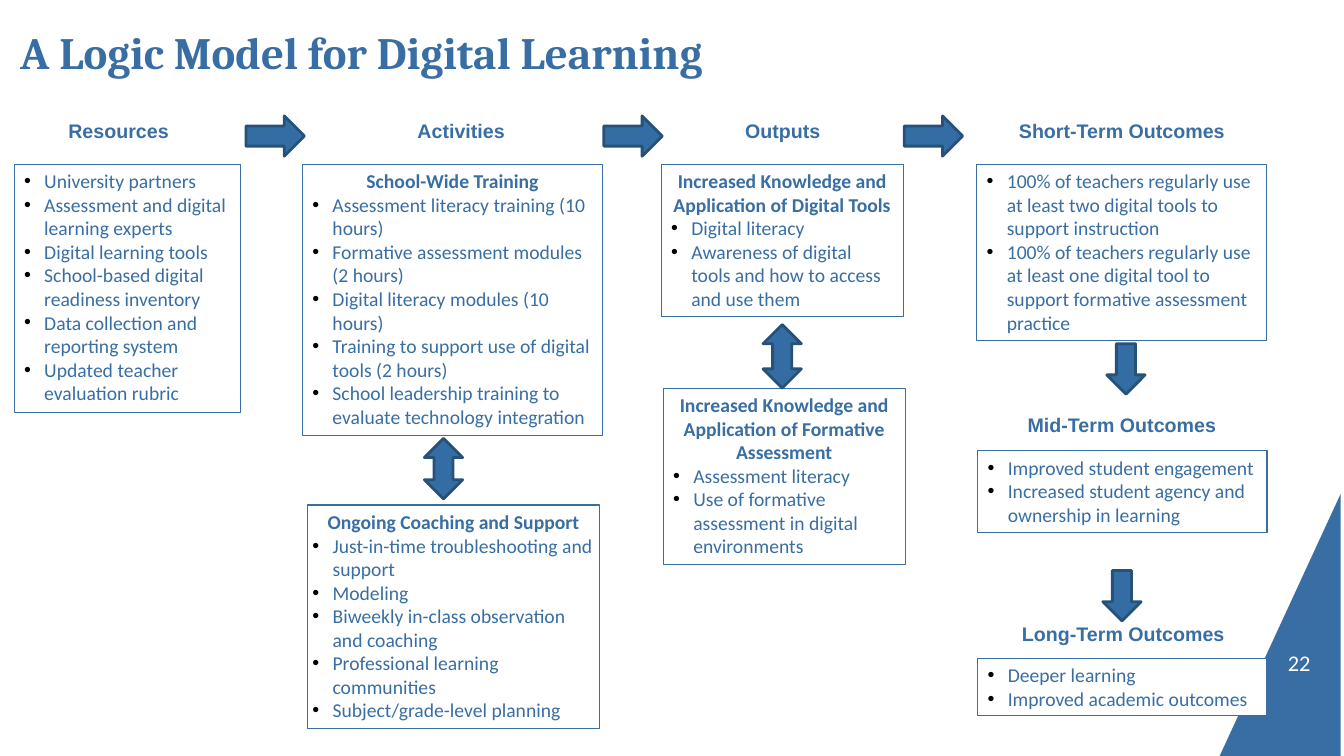
from dataclasses import dataclass

from lxml import etree
from pptx import Presentation
from pptx import util as u
from pptx.dml.color import RGBColor
from pptx.enum import shapes, text
from pptx.oxml.ns import qn

CELL = u.Inches(0.1)
COLS, ROWS = 133.33, 75
TOP, HEAD = 16.3, 11.3
KIND = shapes.MSO_SHAPE
LEFT, MID, RIGHT = text.PP_ALIGN.LEFT, text.PP_ALIGN.CENTER, text.PP_ALIGN.RIGHT


@dataclass(frozen=True)
class Theme:
    """Colours, fonts and type sizes of the slide."""
    ink: str = "386EA3"
    arrow: str = "346DA3"
    edge: str = "265179"
    white: str = "FFFFFF"
    dot: str = "000000"
    serif: str = "Cambria"
    sans: str = "Arial"
    body: str = "Calibri"
    large: int = 32
    page: int = 16
    small: int = 14


THEME = Theme()


def grid(*cells):
    """Turn grid cells into slide lengths."""
    return [int(n * CELL) for n in cells]


def paint(shape, fill=None, line=None, width=0.75):
    """Set fill and line of a shape and drop its shadow."""
    shape.shadow.inherit = False
    if fill:
        shape.fill.solid()
        shape.fill.fore_color.rgb = RGBColor.from_string(fill)
    else:
        shape.fill.background()
    if line:
        shape.line.color.rgb = RGBColor.from_string(line)
        shape.line.width = u.Pt(width)
    else:
        shape.line.fill.background()


def setup(shape, pad=None, anchor=text.MSO_ANCHOR.TOP, size=text.MSO_AUTO_SIZE.NONE):
    """Prepare a text frame with wrapping, anchor and margins."""
    frame = shape.text_frame
    frame.word_wrap = True
    frame.auto_size = size
    frame.vertical_anchor = anchor
    if pad is not None:
        frame.margin_left = frame.margin_right = u.Inches(pad)
        frame.margin_top = frame.margin_bottom = u.Inches(pad)
    return frame


def write(para, words, face, size, bold=False, color=THEME.ink, align=LEFT):
    """Add one formatted run to a paragraph."""
    para.alignment = align
    run = para.add_run()
    run.text = words
    font = run.font
    font.name, font.size, font.bold = face, u.Pt(size), bold
    font.color.rgb = RGBColor.from_string(color)


def bullet(para):
    """Give a paragraph a black dot and a hanging indent."""
    props = para._p.get_or_add_pPr()
    hang = u.Inches(0.2)
    props.set("marL", str(hang))
    props.set("indent", str(-hang))
    tint = etree.SubElement(props, qn("a:buClr"))
    etree.SubElement(tint, qn("a:srgbClr")).set("val", THEME.dot)
    etree.SubElement(props, qn("a:buFont")).set("typeface", THEME.sans)
    etree.SubElement(props, qn("a:buChar")).set("char", "•")


def title(slide, words):
    """Place and fill the title."""
    shape = slide.shapes.title
    shape.left, shape.top, shape.width, shape.height = grid(2, 2.4, 109.7, 5.4)
    frame = setup(shape, 0, text.MSO_ANCHOR.MIDDLE)
    write(frame.paragraphs[0], words, THEME.serif, THEME.large, True)


def corner(slide, number):
    """Draw the corner triangle and the page number on it."""
    pen = slide.shapes.build_freeform(COLS, 49.1, scale=CELL)
    pen.add_line_segments([(120.7, ROWS), (COLS, ROWS)])
    paint(pen.convert_to_shape(), THEME.ink)
    note = slide.shapes.add_textbox(*grid(120.1, 64.1, 9.9, 3))
    frame = setup(note, 0, text.MSO_ANCHOR.BOTTOM)
    write(frame.paragraphs[0], number, THEME.body, THEME.page, color=THEME.white, align=RIGHT)


def heading(slide, words, left, top, width, align=MID):
    """Add a stage heading."""
    note = slide.shapes.add_textbox(*grid(left, top, width, 3.4))
    frame = setup(note, size=text.MSO_AUTO_SIZE.SHAPE_TO_FIT_TEXT)
    write(frame.paragraphs[0], words, THEME.sans, THEME.small, True, align=align)


def panel(slide, place, items, head=None, fill=None, pad=None):
    """Add a framed list with an optional bold head."""
    shape = slide.shapes.add_shape(KIND.RECTANGLE, *grid(*place))
    paint(shape, fill, THEME.ink)
    frame = setup(shape, pad, size=text.MSO_AUTO_SIZE.SHAPE_TO_FIT_TEXT)
    for n, words in enumerate(([head] if head else []) + items):
        para = frame.add_paragraph() if n else frame.paragraphs[0]
        top = words == head
        if not top:
            bullet(para)
        write(para, words, THEME.body, THEME.small, top, align=MID if top else LEFT)


def arrow(slide, kind, left, top, width, height, turn=0):
    """Add a block arrow."""
    shape = slide.shapes.add_shape(kind, *grid(left, top, width, height))
    shape.rotation = turn
    paint(shape, THEME.arrow, THEME.edge, 2)


def main():
    """Build and save the slide."""
    deck = Presentation()
    deck.slide_width, deck.slide_height = grid(COLS, ROWS)
    slide = deck.slides.add_slide(deck.slide_layouts[5])
    title(slide, "A Logic Model for Digital Learning")
    corner(slide, "22")

    for words, left, top, width, align in (
        ("Resources", 5.8, HEAD, 16.3, LEFT),
        ("Activities", 35.5, HEAD, 20.5, MID),
        ("Outputs", 70.2, HEAD, 14.9, MID),
        ("Short-Term Outcomes", 95.4, HEAD, 31.8, MID),
        ("Mid-Term Outcomes", 96.4, 40.5, 29.8, MID),
        ("Long-Term Outcomes", 100.4, 61.2, 31.8, LEFT),
    ):
        heading(slide, words, left, top, width, align)

    panel(slide, (1.4, TOP, 22.5, 24.6), [
        "University partners",
        "Assessment and digital learning experts",
        "Digital learning tools",
        "School-based digital readiness inventory",
        "Data collection and reporting system",
        "Updated teacher evaluation rubric"])
    panel(slide, (30, TOP, 29.8, 26.9), [
        "Assessment literacy training (10 hours)",
        "Formative assessment modules (2 hours)",
        "Digital literacy modules (10 hours)",
        "Training to support use of digital tools (2 hours)",
        "School leadership training to evaluate technology integration"],
        "School-Wide Training")
    panel(slide, (30.5, 50.1, 29, 22.2), [
        "Just-in-time troubleshooting and support",
        "Modeling",
        "Biweekly in-class observation and coaching",
        "Professional learning communities",
        "Subject/grade-level planning"],
        "Ongoing Coaching and Support", THEME.white, 0.05)
    panel(slide, (65.6, TOP, 24, 15.1), [
        "Digital literacy",
        "Awareness of digital tools and how to access and use them"],
        "Increased Knowledge and Application of Digital Tools")
    panel(slide, (65.8, 38.5, 24, 17.5), [
        "Assessment literacy",
        "Use of formative assessment in digital environments"],
        "Increased Knowledge and Application of Formative Assessment")
    panel(slide, (96.9, TOP, 28.7, 17.5), [
        "100% of teachers regularly use at least two digital tools to support instruction",
        "100% of teachers regularly use at least one digital tool to support "
        "formative assessment practice"])
    panel(slide, (97, 44.7, 28.7, 8.1), [
        "Improved student engagement",
        "Increased student agency and ownership in learning"])
    panel(slide, (97, 65.3, 28.7, 5.7), [
        "Deeper learning",
        "Improved academic outcomes"], fill=THEME.white)

    for left in (24.4, 59.9, 89.7):
        arrow(slide, KIND.RIGHT_ARROW, left, 11.5, 5.8, 4)
    for left, top in ((109.2, 34.7), (108.8, 57.2)):
        arrow(slide, KIND.RIGHT_ARROW, left, top, 5, 3.8, 90)
    for left, top, height in ((42.1, 43.5, 6), (75.7, 32.2, 6.3)):
        arrow(slide, KIND.UP_DOWN_ARROW, left, top, 3.8, height)

    deck.save("out.pptx")


if __name__ == "__main__":
    main()
